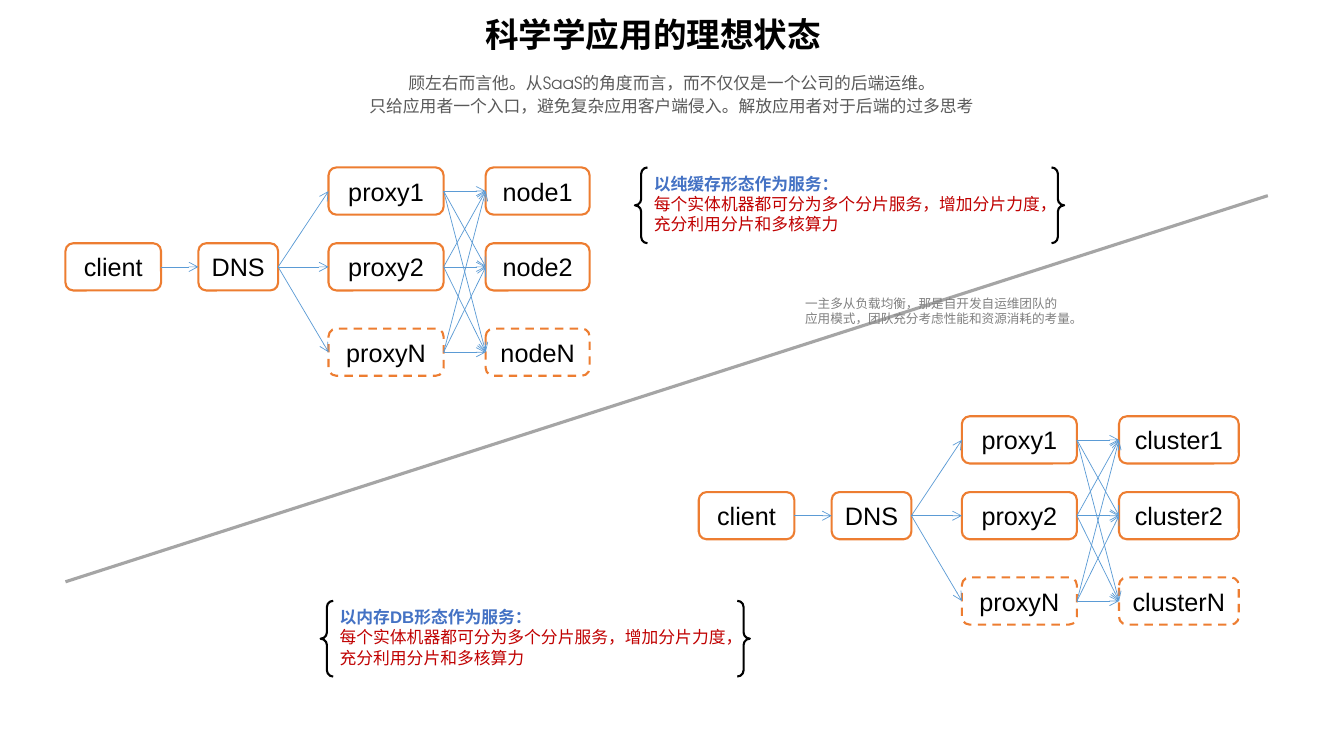
from dataclasses import dataclass
from itertools import product

from lxml import etree
from pptx import Presentation
from pptx.dml.color import RGBColor
from pptx.enum.dml import MSO_LINE
from pptx.enum.shapes import MSO_CONNECTOR, MSO_SHAPE
from pptx.enum.text import MSO_ANCHOR, PP_ALIGN
from pptx.oxml.ns import qn
from pptx.shapes.autoshape import Shape
from pptx.shapes.connector import Connector
from pptx.shapes.shapetree import GroupShapes, SlideShapes
from pptx.util import Cm, Pt

ROUND, BRACE = MSO_SHAPE.ROUNDED_RECTANGLE, MSO_SHAPE.LEFT_BRACE
BRACES = MSO_SHAPE.DOUBLE_BRACE
STRAIGHT = MSO_CONNECTOR.STRAIGHT
DASH = MSO_LINE.DASH
MIDDLE = MSO_ANCHOR.MIDDLE
CENTER, LEFT = PP_ALIGN.CENTER, PP_ALIGN.LEFT
LEFT_SIDE, RIGHT_SIDE = 1, 3

COLORS = {
    "white": "FFFFFF", "black": "000000", "orange": "ED7D31", "arrow": "5B9BD5",
    "slash": "A5A5A5", "intro": "595959", "head": "4472C4", "body": "C00000",
    "tip": "808080",
}
ROWS = (0, 1.91, 4.06)
BOX_HEIGHT = 1.19
Tree = SlideShapes | GroupShapes


@dataclass
class Words:
    left: float
    top: float
    width: float
    height: float
    lines: tuple[str, ...]
    size: int
    color: str
    font: str = "Arial"
    bold: bool = False
    align: PP_ALIGN = LEFT
    wrap: bool = True
    spacing: float = 1.0


@dataclass
class Flow:
    left: float
    top: float
    target: str
    width: float


@dataclass
class Note:
    left: float
    top: float
    head: str
    width: float


INTRO = Words(8.08, 1.63, 17.7, 1.42, (
    "顾左右而言他。从SaaS的角度而言，而不仅仅是一个公司的后端运维。",
    "只给应用者一个入口，避免复杂应用客户端侵入。解放应用者对于后端的过多思考",
), 12, "intro", font="TeX Gyre Adventor", align=CENTER, spacing=1.14)
TITLE = Words(8.66, 0.23, 15.6, 1.55, ("科学学应用的理想状态",), 24, "black",
              bold=True, align=CENTER)
TIP = Words(20.04, 7.32, 7.49, 1.02, (
    "一主多从负载均衡，那是自开发自运维团队的",
    "应用模式，团队充分考虑性能和资源消耗的考量。",
), 9, "tip", wrap=False)
FLOWS = (Flow(1.65, 4.22, "node", 2.62), Flow(17.61, 10.49, "cluster", 3.02))
NOTES = (
    Note(16, 4.22, "以纯缓存形态作为服务：", 10.92),
    Note(8.08, 15.14, "以内存DB形态作为服务：", 10.36),
)
NOTE_BODY = ("每个实体机器都可分为多个分片服务，增加分片力度，", "充分利用分片和多核算力")


def rgb(name: str) -> RGBColor:
    return RGBColor.from_string(COLORS[name])


def add_words(tree: Tree, words: Words) -> Shape:
    box = tree.add_textbox(Cm(words.left), Cm(words.top), Cm(words.width), Cm(words.height))
    frame = box.text_frame
    frame.word_wrap = words.wrap
    frame.text = "\n".join(words.lines)
    for para in frame.paragraphs:
        para.alignment = words.align
        para.line_spacing = words.spacing
        for run in para.runs:
            run.font.name = words.font
            run.font.size = Pt(words.size)
            run.font.bold = words.bold
            run.font.color.rgb = rgb(words.color)
    return box


def add_box(tree: Tree, left: float, top: float, width: float, label: str) -> Shape:
    """Add a labelled node; the N-th one has a dashed edge."""
    box = tree.add_shape(ROUND, Cm(left), Cm(top), Cm(width), Cm(BOX_HEIGHT))
    box.shadow.inherit = False
    box.fill.solid()
    box.fill.fore_color.rgb = rgb("white")
    box.line.color.rgb = rgb("orange")
    box.line.width = Pt(1.5)
    if label.endswith("N"):
        box.line.dash_style = DASH
    frame = box.text_frame
    frame.margin_left = frame.margin_right = 0
    frame.vertical_anchor = MIDDLE
    frame.text = label
    para = frame.paragraphs[0]
    para.alignment = CENTER
    font = para.runs[0].font
    font.name = "Arial"
    font.size = Pt(18)
    font.color.rgb = rgb("black")
    return box


def add_line(tree: Tree, start: tuple[float, float], end: tuple[float, float],
             color: str, weight: float) -> Connector:
    line = tree.add_connector(STRAIGHT, Cm(start[0]), Cm(start[1]), Cm(end[0]), Cm(end[1]))
    line.line.color.rgb = rgb(color)
    line.line.width = Pt(weight)
    etree.SubElement(line._element.spPr, qn("a:effectLst"))
    return line


def add_arrow(tree: Tree, source: Shape, target: Shape) -> None:
    line = add_line(tree, (0, 0), (1, 1), "arrow", 0.5)
    line.begin_connect(source, RIGHT_SIDE)
    line.end_connect(target, LEFT_SIDE)
    edge = line.line._get_or_add_ln()
    etree.SubElement(edge, qn("a:tailEnd"), type="arrow")


def add_flow(tree: Tree, flow: Flow) -> None:
    group = tree.add_group_shape().shapes

    def place(shift: float, row: float, width: float, label: str) -> Shape:
        return add_box(group, flow.left + shift, flow.top + row, width, label)

    def stack(shift: float, width: float, name: str) -> list[Shape]:
        return [place(shift, row, width, name + mark) for row, mark in zip(ROWS, "12N")]

    client = place(0, ROWS[1], 2.41, "client")
    dns = place(3.35, ROWS[1], 2.01, "DNS")
    proxies = stack(6.63, 2.9, "proxy")
    targets = stack(10.59, flow.width, flow.target)
    links = [(client, dns), *product([dns], proxies), *product(proxies, targets)]
    for source, target in links:
        add_arrow(group, source, target)


def add_note(tree: Tree, note: Note) -> None:
    group = tree.add_group_shape().shapes
    brace = group.add_shape(BRACES, Cm(note.left), Cm(note.top), Cm(10.82), Cm(1.91))
    brace.shadow.inherit = False
    brace.fill.background()
    brace.line.color.rgb = rgb("black")
    brace.line.width = Pt(1.5)
    lines = (note.head, *NOTE_BODY)
    box = add_words(group, Words(note.left + 0.23, note.top + 0.03, note.width, 1.8,
                                 lines, 12, "body"))
    font = box.text_frame.paragraphs[0].runs[0].font
    font.bold = True
    font.color.rgb = rgb("head")


def main() -> None:
    deck = Presentation()
    deck.slide_width, deck.slide_height = Cm(33.87), Cm(19.05)
    tree = deck.slides.add_slide(deck.slide_layouts[6]).shapes
    add_words(tree, INTRO)
    add_words(tree, TITLE)
    for flow in FLOWS:
        add_flow(tree, flow)
    add_line(tree, (1.65, 14.66), (31.95, 4.93), "slash", 2.25)
    for note in NOTES:
        add_note(tree, note)
    add_words(tree, TIP)
    deck.save("out.pptx")


if __name__ == "__main__":
    main()
